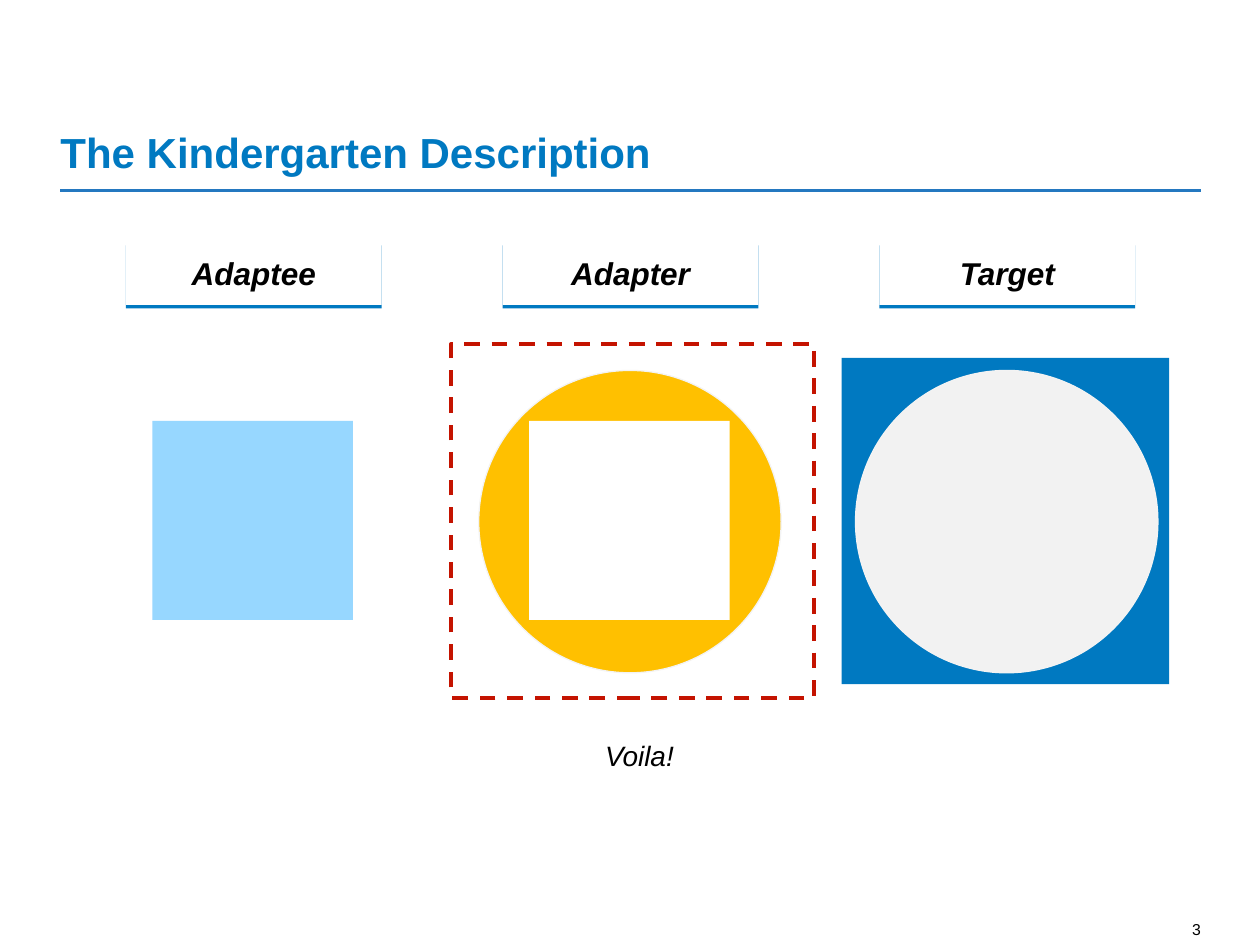
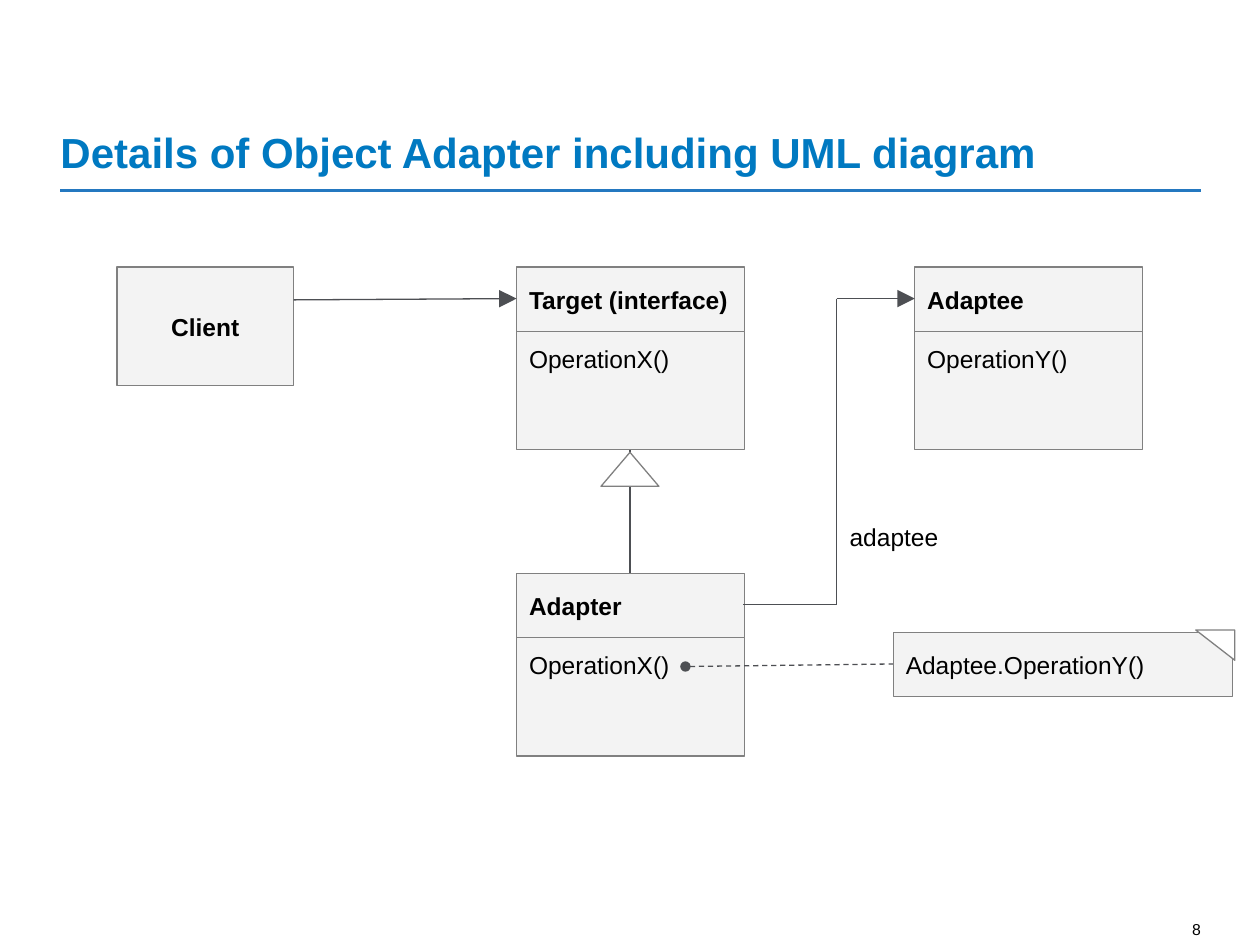
from lxml import etree
from pptx import Presentation
from pptx.dml.color import RGBColor
from pptx.enum.dml import MSO_LINE
from pptx.enum.shapes import MSO_CONNECTOR, MSO_SHAPE
from pptx.enum.text import MSO_ANCHOR as ANCHOR, PP_ALIGN as ALIGN
from pptx.oxml.ns import qn
from pptx.util import Inches, Pt

COLORS = {
    "blue": "0079C1", "rule": "2478C0", "sky": "97D7FF", "amber": "FFC000",
    "red": "C41300", "panel": "F3F3F3", "hole": "F2F2F2", "border": "808080",
    "arrow": "4D4F53", "white": "FFFFFF", "black": "000000",
}
FONT = "Arial"


def rgb(name):
    return RGBColor.from_string(COLORS[name])


class Deck:
    def __init__(self):
        self.prs = Presentation()
        self.prs.slide_width, self.prs.slide_height = Inches(10), Inches(7.5)
        self.slide = None

    def add_slide(self, title, number):
        self.slide = self.prs.slides.add_slide(self.prs.slide_layouts[6])
        self.line(0.48, 1.51, 9.53, 1.51, color="rule", width=1.5)
        self.text(title, 0.48, 0.78, 9.05, 0.62, size=24, color="blue",
                  bold=True, anchor=ANCHOR.BOTTOM, insets=(0, 0))
        self.text(str(number), 9.34, 7.3, 0.19, 0.14, size=9,
                  align=ALIGN.RIGHT, insets=(0, 0), wrap=False)

    def set_text(self, holder, words, size=14, color="black", bold=False, italic=False,
                 align=ALIGN.LEFT, anchor=ANCHOR.TOP, insets=(0.1, 0.1), wrap=True):
        frame = holder.text_frame
        frame.text = words
        frame.word_wrap = wrap
        frame.vertical_anchor = anchor
        frame.margin_left = frame.margin_right = Inches(insets[0])
        frame.margin_top = frame.margin_bottom = Inches(insets[1])
        paragraph = frame.paragraphs[0]
        paragraph.alignment = align
        font = paragraph.runs[0].font
        font.name, font.size = FONT, Pt(size)
        font.bold, font.italic = bold, italic
        font.color.rgb = rgb(color)

    def text(self, words, left, top, width, height, **style):
        box = self.slide.shapes.add_textbox(
            Inches(left), Inches(top), Inches(width), Inches(height))
        self.set_text(box, words, **style)

    def shape(self, kind, left, top, width, height, fill=None, border=None,
              border_width=0.75, dashed=False):
        shape = self.slide.shapes.add_shape(
            kind, Inches(left), Inches(top), Inches(width), Inches(height))
        shape.shadow.inherit = False
        if fill:
            shape.fill.solid()
            shape.fill.fore_color.rgb = rgb(fill)
        else:
            shape.fill.background()
        if border:
            shape.line.color.rgb = rgb(border)
            shape.line.width = Pt(border_width)
        else:
            shape.line.fill.background()
        if dashed:
            shape.line.dash_style = MSO_LINE.DASH
        return shape

    def line(self, x1, y1, x2, y2, color="arrow", width=0.75, dashed=False,
             start=None, end=None):
        """Draw a line; start and end are (arrowhead type, size) pairs."""
        line = self.slide.shapes.add_connector(
            MSO_CONNECTOR.STRAIGHT, Inches(x1), Inches(y1), Inches(x2), Inches(y2))
        line.line.color.rgb = rgb(color)
        line.line.width = Pt(width)
        if dashed:
            line.line.dash_style = MSO_LINE.DASH
        properties = line._element.spPr
        outline = properties.find(qn("a:ln"))
        for tag, head in (("a:headEnd", start), ("a:tailEnd", end)):
            if head:
                etree.SubElement(outline, qn(tag), type=head[0], w=head[1], len=head[1])
        etree.SubElement(properties, qn("a:effectLst"))

    def heading(self, words, left):
        """Column heading whose hard blue shadow forms the underline."""
        heading = self.shape(MSO_SHAPE.RECTANGLE, left, 1.92, 2.03, 0.5, fill="white")
        effects = heading._element.spPr.find(qn("a:effectLst"))
        shadow = etree.SubElement(effects, qn("a:outerShdw"), blurRad="0",
                                  dist=str(Pt(2)), dir="5400000", rotWithShape="0")
        etree.SubElement(shadow, qn("a:srgbClr"), val=COLORS["blue"])
        self.set_text(heading, words, size=18, bold=True, italic=True,
                      align=ALIGN.CENTER, anchor=ANCHOR.BOTTOM)

    def panel(self, words, left, top, width, height, anchor=ANCHOR.MIDDLE, **style):
        panel = self.shape(MSO_SHAPE.RECTANGLE, left, top, width, height,
                           fill="panel", border="border")
        self.set_text(panel, words, anchor=anchor, **style)

    def uml_class(self, name, operation, left, top):
        self.panel(name, left, top, 1.81, 0.51, bold=True)
        self.panel(operation, left, top + 0.51, 1.81, 0.94, anchor=ANCHOR.TOP)


def kindergarten_slide(deck):
    deck.add_slide("The Kindergarten Description", 3)
    square, circle = MSO_SHAPE.RECTANGLE, MSO_SHAPE.OVAL
    deck.shape(square, 6.68, 2.84, 2.6, 2.59, fill="blue")
    deck.shape(circle, 6.79, 2.94, 2.4, 2.4, fill="hole", border="panel")
    for column, role in enumerate(("Adaptee", "Adapter", "Target")):
        deck.heading(role, 1 + column * 2.99)
    deck.shape(square, 1.21, 3.34, 1.59, 1.58, fill="sky")
    deck.shape(square, 3.58, 2.73, 2.88, 2.81, border="red", border_width=2.25,
               dashed=True)
    deck.shape(circle, 3.8, 2.94, 2.4, 2.4, fill="amber", border="panel")
    deck.shape(square, 4.2, 3.34, 1.59, 1.58, fill="white")
    deck.text("Voila!", 4.28, 5.81, 1.59, 0.37, size=16, italic=True,
              align=ALIGN.CENTER, insets=(0.1, 0.05))


def uml_slide(deck):
    deck.add_slide("Details of Object Adapter including UML diagram", 8)
    arrow = ("triangle", "lg")
    deck.panel("Client", 0.93, 2.12, 1.4, 0.94, bold=True, align=ALIGN.CENTER)
    for name, operation, left, top in (
        ("Target (interface)", "OperationX()", 4.1, 2.12),
        ("Adaptee", "OperationY()", 7.26, 2.12),
        ("Adapter", "OperationX()", 4.1, 4.55),
    ):
        deck.uml_class(name, operation, left, top)

    deck.line(2.33, 2.38, 4.1, 2.37, end=arrow)

    # Adapter holds a reference to the adaptee
    deck.line(5.9, 4.8, 6.64, 4.8)
    deck.line(6.64, 2.37, 6.64, 4.8)
    deck.line(6.64, 2.37, 7.26, 2.37, end=arrow)
    deck.text("adaptee", 6.64, 4.09, 0.91, 0.34, align=ALIGN.CENTER,
              insets=(0.1, 0.05), wrap=False)

    # Adapter implements the target interface
    deck.line(5, 3.57, 5, 4.55)
    deck.shape(MSO_SHAPE.ISOSCELES_TRIANGLE, 4.77, 3.59, 0.46, 0.27,
               fill="white", border="border")

    # Note on the delegated call
    deck.line(5.44, 5.29, 7.09, 5.27, dashed=True, start=("oval", "med"))
    deck.panel("Adaptee.OperationY()", 7.09, 5.02, 2.69, 0.51)
    fold = deck.shape(MSO_SHAPE.RIGHT_TRIANGLE, 9.49, 5, 0.31, 0.24,
                      fill="white", border="border")
    fold.rotation = 180


def main():
    deck = Deck()
    kindergarten_slide(deck)
    uml_slide(deck)
    deck.prs.save("out.pptx")


if __name__ == "__main__":
    main()
